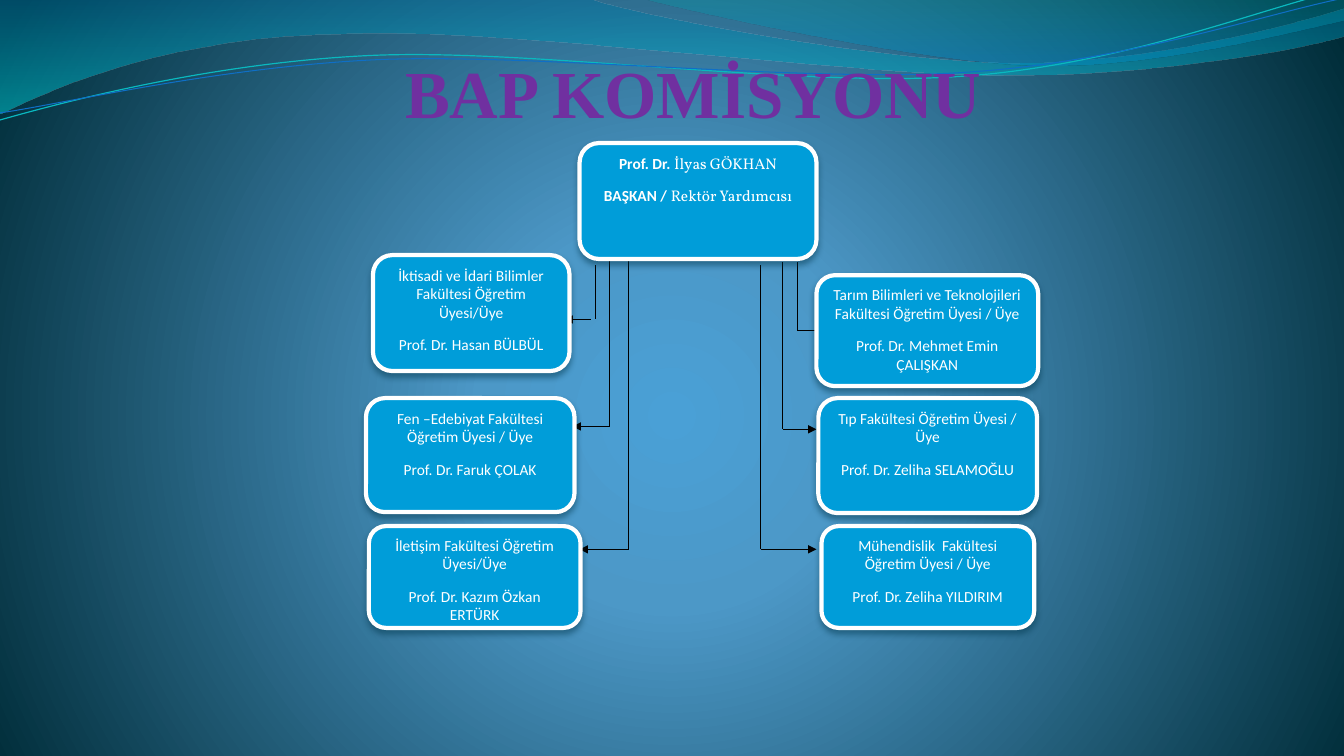
import pptx
import pptx.util
import pptx.dml.color
import pptx.enum.shapes
import pptx.enum.text
import pptx.oxml
import pptx.oxml.ns

Pt = pptx.util.Pt
qn = pptx.oxml.ns.qn
NAMESPACE = pptx.oxml.ns.nsdecls("a")
ALIGN = pptx.enum.text.PP_ALIGN


def color(hex_text):
    return pptx.dml.color.RGBColor.from_string(hex_text)


def gradient(stops, direction):
    marks = "".join(
        f'<a:gs pos="{place * 1000}"><a:srgbClr val="{shade}">'
        f'<a:alpha val="{opacity * 1000}"/></a:srgbClr></a:gs>'
        for place, shade, opacity in stops)
    return pptx.oxml.parse_xml(
        f'<a:gradFill {NAMESPACE} rotWithShape="1"><a:gsLst>{marks}</a:gsLst>{direction}</a:gradFill>')


deck = pptx.Presentation()
deck.slide_width, deck.slide_height = Pt(960), Pt(540)
page = deck.slides.add_slide(deck.slide_layouts[5])

backdrop = page.background.fill
backdrop.gradient()
old_fill = page.background._cSld.bg.bgPr.find(qn("a:gradFill"))
old_fill.getparent().replace(old_fill, gradient(
    [(0, "4AA0D6", 100), (25, "4C98C7", 100), (100, "002C38", 100)],
    '<a:path path="circle"><a:fillToRect l="50000" t="55000" r="50000" b="45000"/></a:path>'))

waves = [
    ([(0, 0), (422.6, 0),
      (456.5, 12.2, 637.2, 45.4, 727.9, 45.4), (819.4, 45.4, 920.2, 18.7, 960, 6.5),
      (960, 26), (944, 31.7, 835.2, 54.7, 715.7, 54),
      (596.9, 54, 366.5, 20.2, 247, 24.5), (123.8, 25.9, 43.9, 59.8, 0, 81.4)],
     [(0, "0074A1", 45), (100, "00C6CF", 55)], None),
    ([(460, 0), (488.9, 7.9, 654.5, 44.6, 738, 46.8),
      (821.5, 49.7, 923, 23, 960, 15.1), (960, 0)],
     [(0, "00A1A9", 30), (80, "008BBF", 45)], None),
    ([(0, 85.7), (46, 72.7, 152, 44.6, 265.7, 39.6),
      (379.4, 34.6, 568.8, 62.6, 684, 54.7), (799.2, 47.5, 901.4, 5.8, 958.3, -7.2)],
     None, ("0AB8BF", 0.85)),
    ([(0, 80.6), (45.4, 74.2, 157, 47.5, 272.2, 42.5),
      (386.6, 38.2, 573, 59, 687.6, 51.8), (802.8, 44.6, 903.6, 10, 960, -1.4)],
     None, ("0F6FC6", 0.75)),
]
for segments, stops, stroke in waves:
    points = [(segment[i] * 100, segment[i + 1] * 100)
              for segment in segments for i in range(0, len(segment), 2)]
    builder = page.shapes.build_freeform(*points[0], scale=Pt(1) / 100)
    builder.add_line_segments(points[1:], close=stops is not None)
    wave = builder.convert_to_shape()
    steps = iter(list(wave._element.iter(qn("a:lnTo"))))
    for segment in segments[1:]:
        step = next(steps)
        if len(segment) == 6:
            curve = pptx.oxml.parse_xml(f"<a:cubicBezTo {NAMESPACE}/>")
            step.addprevious(curve)
            for part in (step, next(steps), next(steps)):
                curve.append(part[0])
                part.getparent().remove(part)
    wave.shadow.inherit = False
    wave.fill.background()
    if stops:
        wave.line.fill.background()
        empty_fill = wave._element.spPr.find(qn("a:noFill"))
        wave._element.spPr.replace(empty_fill, gradient(stops, '<a:lin ang="5400000" scaled="0"/>'))
    else:
        wave.line.color.rgb = color(stroke[0])
        wave.line.width = Pt(stroke[1])

title = page.shapes.title
page.shapes._spTree.append(title._element)
title.left, title.top, title.width, title.height = Pt(55.4), Pt(26.6), Pt(816), Pt(68.4)
frame = title.text_frame
frame.text = "BAP KOMİSYONU"
frame.auto_size = pptx.enum.text.MSO_AUTO_SIZE.NONE
frame.vertical_anchor = pptx.enum.text.MSO_ANCHOR.BOTTOM
frame.margin_left = frame.margin_right = frame.margin_top = 0
frame.margin_bottom = Pt(1)
para = frame.paragraphs[0]
para.alignment = ALIGN.CENTER
para._p.get_or_add_pPr().set("marL", str(Pt(64)))
font = para.runs[0].font
font.name, font.size, font.bold = "Times New Roman", Pt(48), True
font.color.rgb = color("7030A0")

elbows = [
    (425.5, 189.4, 228.2, 421.9, 403.2),
    (435.6, 184.3, 304.6, 435.6, 409),
    (449, 184.3, 392.4, 449, 414),
    (569.5, 187.2, 236.2, 569.5, 588.2),
    (559.2, 187.2, 306.7, 559.2, 583.2),
    (543.4, 189.4, 392.4, 543.4, 583.2),
]
for trunk, top, level, start, tip in elbows:
    for ends, arrow in (((trunk, top, trunk, level), False), ((start, level, tip, level), True)):
        line = page.shapes.add_connector(
            pptx.enum.shapes.MSO_CONNECTOR.STRAIGHT, *[Pt(value) for value in ends])
        line.line.color.rgb = color("000000")
        line.line.width = Pt(0.75)
        if arrow:
            line.line._get_or_add_ln().append(
                pptx.oxml.parse_xml(f'<a:tailEnd {NAMESPACE} type="triangle"/>'))
        line._element.spPr.append(pptx.oxml.parse_xml(f"<a:effectLst {NAMESPACE}/>"))

members = [
    (261.4, 284.4, 149, 81.4,
     [["Fen –Edebiyat Fakültesi Öğretim Üyesi / Üye"], ["Prof. Dr. Faruk ÇOLAK"]]),
    (263.5, 375.8, 151.2, 72.7,
     [["İletişim Fakültesi Öğretim Üyesi/Üye"], ["Prof. Dr. Kazım Özkan ERTÜRK"]]),
    (583.2, 196.6, 158.4, 79.2,
     [["Tarım Bilimleri ve Teknolojileri Fakültesi Öğretim Üyesi / Üye"],
      ["Prof. Dr. Mehmet Emin ÇALIŞKAN"]]),
    (584.6, 284.4, 156.2, 82.1,
     [["Tıp Fakültesi Öğretim Üyesi / Üye"], ["Prof. Dr. Zeliha SELAMOĞLU"]]),
    (586.8, 375.8, 151.9, 72.7,
     [["Mühendislik  Fakültesi Öğretim Üyesi / Üye"], ["Prof. Dr. Zeliha YILDIRIM"]]),
    (414, 102.2, 169.2, 82.8,
     [["Prof. Dr. ", "İlyas GÖKHAN"], ["BAŞKAN / ", "Rektör Yardımcısı"]]),
    (266.4, 182.2, 140.4, 82.8,
     [["İktisadi ve İdari Bilimler Fakültesi Öğretim Üyesi/Üye"], ["Prof. Dr. Hasan BÜLBÜL"]]),
]
for left, top, width, height, lines in members:
    box = page.shapes.add_shape(pptx.enum.shapes.MSO_SHAPE.ROUNDED_RECTANGLE,
                                Pt(left), Pt(top), Pt(width), Pt(height))
    box.fill.solid()
    box.fill.fore_color.rgb = color("009DD9")
    box.line.color.rgb = color("FFFFFF")
    box.line.width = Pt(3)
    box._element.spPr.append(pptx.oxml.parse_xml(
        f'<a:effectLst {NAMESPACE}><a:outerShdw blurRad="{Pt(4.5)}" dist="{Pt(3)}" dir="5400000" '
        'rotWithShape="0"><a:srgbClr val="00374C"><a:alpha val="48000"/></a:srgbClr>'
        '</a:outerShdw></a:effectLst>'))
    frame = box.text_frame
    frame.word_wrap = True
    frame.vertical_anchor = pptx.enum.text.MSO_ANCHOR.TOP
    for number, texts in enumerate(lines):
        para = frame.add_paragraph() if number else frame.paragraphs[0]
        para.alignment = ALIGN.CENTER
        para.space_after = Pt(10)
        for order, text in enumerate(texts):
            span = para.add_run()
            span.text = text
            span.font.name = "Vollkorn" if order else "Calibri"
            span.font.size = Pt(11)
            span.font.bold = len(texts) > 1 and order == 0
            span.font.color.rgb = color("FFFFFF")

deck.save("out.pptx")
